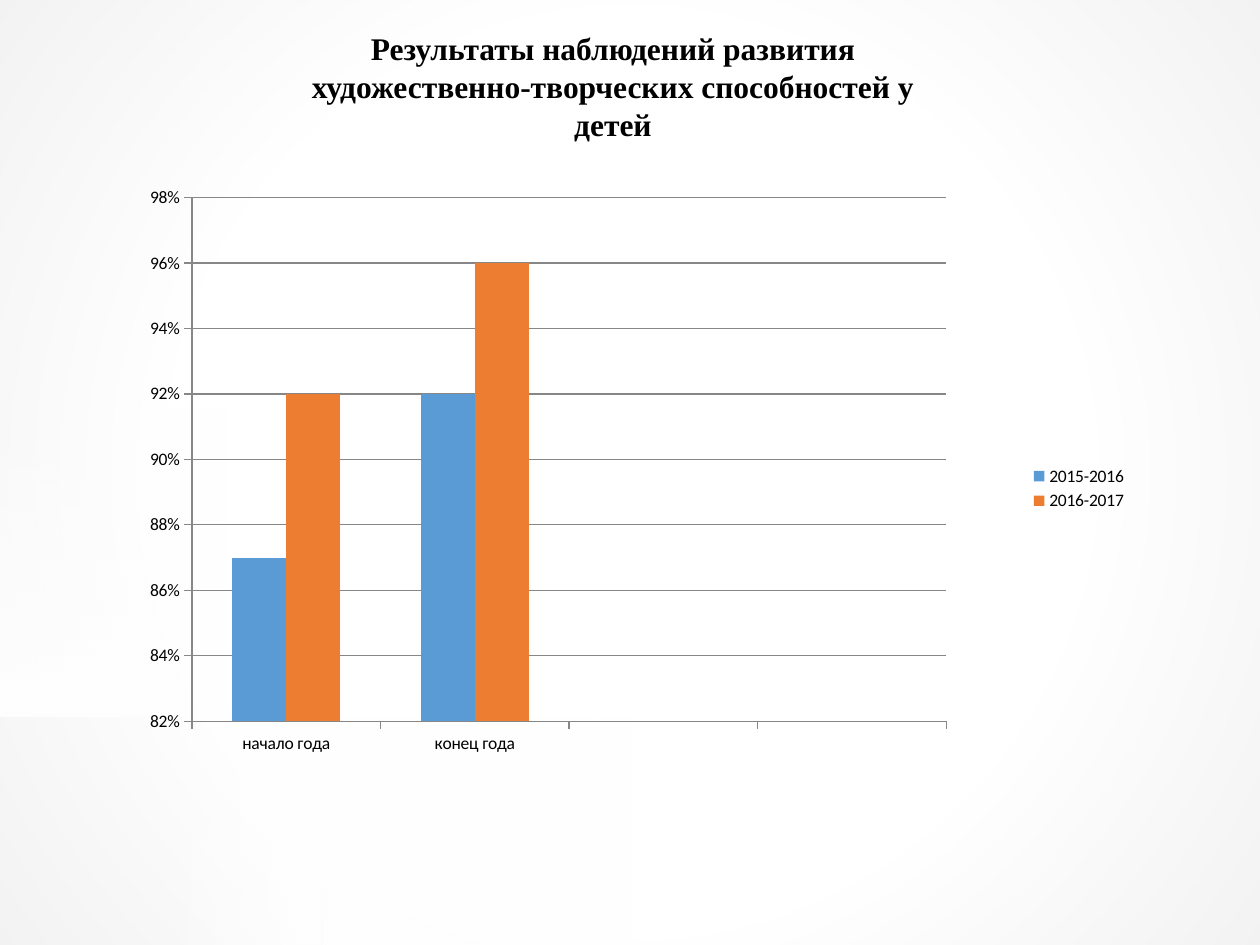
from lxml import etree
from pptx import Presentation
from pptx.chart.data import CategoryChartData
from pptx.dml.color import RGBColor
from pptx.enum.chart import XL_CHART_TYPE, XL_LEGEND_POSITION, XL_TICK_MARK
from pptx.enum.shapes import MSO_SHAPE
from pptx.enum.text import MSO_AUTO_SIZE, PP_ALIGN
from pptx.oxml import parse_xml
from pptx.oxml.ns import nsdecls, qn
from pptx.util import Emu, Pt

COLUMNS = XL_CHART_TYPE.COLUMN_CLUSTERED
LEGEND_RIGHT = XL_LEGEND_POSITION.RIGHT
TICK_OUT = XL_TICK_MARK.OUTSIDE
RECTANGLE = MSO_SHAPE.RECTANGLE
GROW = MSO_AUTO_SIZE.SHAPE_TO_FIT_TEXT
CENTER = PP_ALIGN.CENTER

PX = 914400 / 126
COLORS = {"white": "FFFFFF", "edge": "F2F2F2", "text": "000000",
          "line": "878787", "first": "5B9BD5", "second": "ED7D31"}
RADIAL = ('<a:path path="circle"><a:fillToRect l="50000" t="50000" '
          'r="50000" b="50000"/></a:path>')
LINEAR = '<a:lin ang="10800000" scaled="0"/>'


def px(length):
    return Emu(round(length * PX))


def color(name):
    return RGBColor.from_string(COLORS[name])


def format_text(font, size, face, bold=False):
    font.size, font.name, font.bold = Pt(size), face, bold
    font.color.rgb = color("text")


def write_text(para, text, **style):
    span = para.add_run()
    span.text = text
    format_text(span.font, **style)


def gradient(stops, direction):
    """Gradient fill from (percent, color name, opacity percent) stops."""
    marks = "".join(
        f'<a:gs pos="{at * 1000}"><a:srgbClr val="{COLORS[name]}">'
        f'<a:alpha val="{opacity * 1000}"/></a:srgbClr></a:gs>'
        for at, name, opacity in stops)
    return parse_xml(f'<a:gradFill {nsdecls("a")} rotWithShape="1">'
                     f'<a:gsLst>{marks}</a:gsLst>{direction}</a:gradFill>')


class Page:
    def __init__(self, deck):
        self.slide = deck.slides.add_slide(deck.slide_layouts[6])
        self.shapes = self.slide.shapes
        fill = self.slide.background.fill
        fill.solid()
        fill.fore_color.rgb = color("white")

    def gradient_box(self, left, top, width, height, stops, direction, turn=0):
        box = self.shapes.add_shape(RECTANGLE, px(left), px(top),
                                    px(width), px(height))
        box.shadow.inherit = False
        box.rotation = turn
        box.line.fill.background()
        geometry = box.element.spPr.find(qn("a:prstGeom"))
        geometry.addnext(gradient(stops, direction))

    def title(self, left, top, width, height, text):
        box = self.shapes.add_textbox(px(left), px(top), px(width), px(height))
        frame = box.text_frame
        frame.word_wrap = True
        frame.auto_size = GROW
        para = frame.paragraphs[0]
        para.alignment = CENTER
        write_text(para, text, size=18, face="Times New Roman", bold=True)

    def column_chart(self, left, top, width, height, categories, series, plot_area):
        data = CategoryChartData(number_format="0%")
        data.categories = categories
        for name, values, _ in series:
            data.add_series(name, values)
        chart = self.shapes.add_chart(COLUMNS, px(left), px(top), px(width),
                                      px(height), data).chart
        chart.has_title = False
        format_text(chart.font, size=10, face="Calibri")

        # Columns
        plot = chart.plots[0]
        plot.vary_by_categories = False
        plot.gap_width, plot.overlap = 150, 0
        for column, (_, _, fill_name) in zip(plot.series, series):
            column.format.fill.solid()
            column.format.fill.fore_color.rgb = color(fill_name)

        # Axes
        value_axis = chart.value_axis
        value_axis.minimum_scale, value_axis.maximum_scale = 0.82, 0.98
        value_axis.major_unit = 0.02
        value_axis.has_major_gridlines = True
        value_axis.tick_labels.number_format = "0%"
        value_axis.tick_labels.number_format_is_linked = False
        for axis in (chart.category_axis, value_axis):
            axis.major_tick_mark = TICK_OUT
        for part in (chart.category_axis, value_axis, value_axis.major_gridlines):
            part.format.line.color.rgb = color("line")
            part.format.line.width = Pt(0.75)

        # Legend and inner plot area
        chart.has_legend = True
        chart.legend.position = LEGEND_RIGHT
        chart.legend.include_in_layout = False
        area = chart.element.find(".//" + qn("c:plotArea"))
        for old in area.findall(qn("c:layout")):
            area.remove(old)
        layout = etree.Element(qn("c:layout"))
        manual = etree.SubElement(layout, qn("c:manualLayout"))
        settings = [("layoutTarget", "inner"), ("xMode", "edge"), ("yMode", "edge")]
        settings += zip("xywh", plot_area)
        for tag, value in settings:
            etree.SubElement(manual, qn("c:" + tag)).set("val", str(value))
        area.insert(0, layout)


def main():
    deck = Presentation()
    deck.slide_width, deck.slide_height = px(1260), px(945)
    page = Page(deck)

    # Backdrop: soft vignette, lightened at the lower left
    page.gradient_box(0, 0, 1260, 945, [(0, "white", 0), (58, "white", 100),
                                        (100, "edge", 100)], RADIAL)
    fade = [(0, "white", 100), (100, "white", 0)]
    for left, top, width, height, turn in [(161, 717, 161, 228, 0),
                                           (-42, 447, 311, 228, 90),
                                           (323, 717, 311, 228, 180)]:
        page.gradient_box(left, top, width, height, fade, LINEAR, turn)

    # Heading
    page.title(281, 23, 664, 127, "Результаты наблюдений развития "
               "художественно-творческих способностей у детей")

    # Results, with two empty category slots
    page.column_chart(126, 183, 1014, 611,
                      ["начало года", "конец года", "", ""],
                      [("2015-2016", [0.87, 0.92, None, None], "first"),
                       ("2016-2017", [0.92, 0.96, None, None], "second")],
                      plot_area=(0.065, 0.024, 0.744, 0.857))
    deck.save("out.pptx")


if __name__ == "__main__":
    main()
